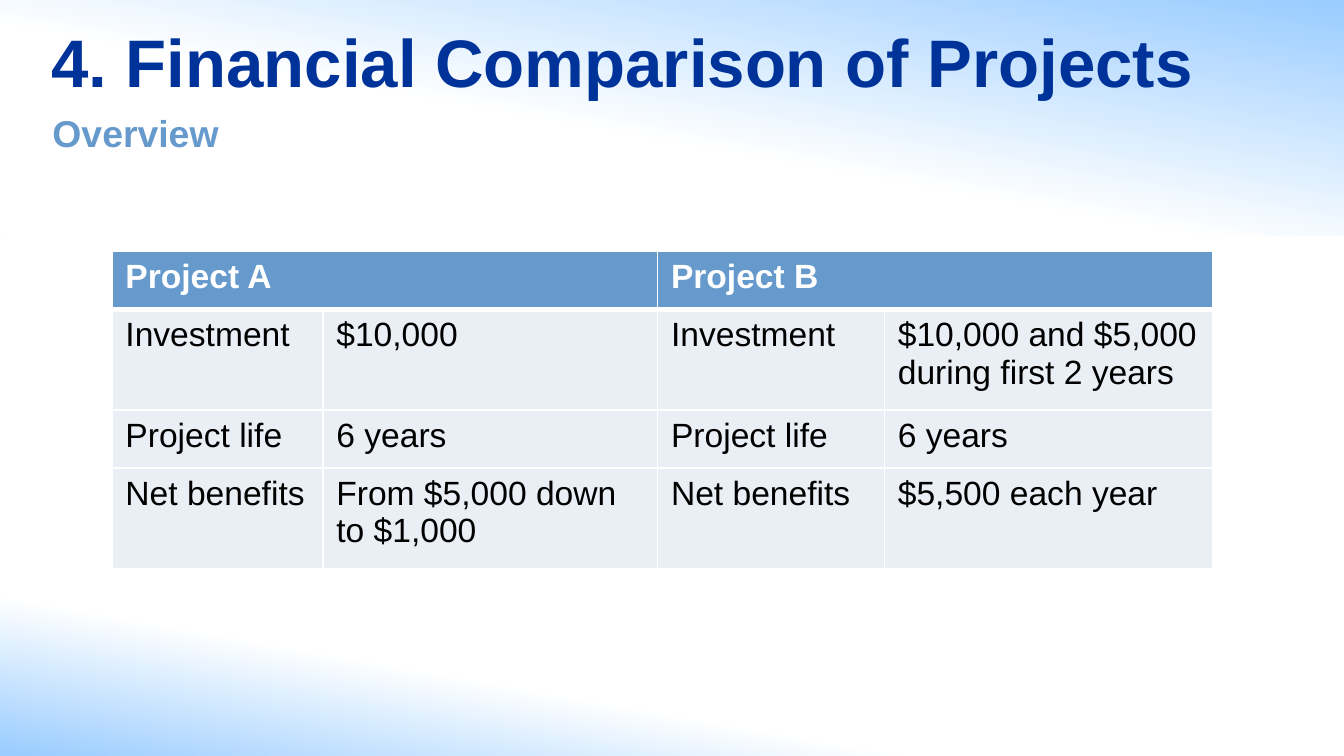
from lxml.etree import SubElement
from pptx import Presentation
from pptx.dml.color import RGBColor
from pptx.enum.shapes import MSO_SHAPE
from pptx.enum.text import MSO_ANCHOR, MSO_AUTO_SIZE, PP_ALIGN
from pptx.oxml import parse_xml
from pptx.oxml.ns import nsdecls, qn
from pptx.util import Pt

# Content
TITLE = "4. Financial Comparison of Projects"
SUBTITLE = "Overview"
PROJECTS = ["Project A", "Project B"]
ROWS = [
    ["Investment", "$10,000", "Investment", "$10,000 and $5,000 during first 2 years"],
    ["Project life", "6 years", "Project life", "6 years"],
    ["Net benefits", "From $5,000 down to $1,000", "Net benefits", "$5,500 each year"],
]

# Look and layout, in points
THEME = {
    "font": "Arial", "title_size": 36, "subtitle_size": 20, "table_size": 18,
    "navy": "003399", "blue": "6699CC", "sky": "99CCFF",
    "pale": "EAEFF6", "white": "FFFFFF", "black": "000000",
}
PAGE_SIZE = (720, 405)
# Left, top, width, height, clockwise angle, position of white in percent
WASHES = [(0, 313, 502, 92, 280, 48), (0, 0, 720, 126, 100, 56)]
TITLE_PLACE = (20.2, 7.2, 669, 51)
SUBTITLE_PLACE = (21, 55.4, 481, 31.5)
TABLE_ORIGIN = (60, 134.8)
COLUMN_WIDTHS = [113, 179.3, 121.5, 175.9]
ROW_HEIGHTS = [31, 54, 31, 54]


def color(name):
    return RGBColor.from_string(THEME[name])


def points(values):
    return [Pt(value) for value in values]


def write(frame, text, size, tone, bold):
    frame.text = text
    font = frame.paragraphs[0].runs[0].font
    font.name, font.size, font.bold = THEME["font"], Pt(THEME[size]), bold
    font.color.rgb = color(tone)


def add_wash(page, left, top, width, height, angle, white_at):
    wash = page.shapes.add_shape(MSO_SHAPE.RECTANGLE, *points((left, top, width, height)))
    wash.shadow.inherit = False
    wash.line.fill.background()
    wash.fill.gradient()
    wash.fill.gradient_angle = 360 - angle
    start, end = wash.fill.gradient_stops
    start.color.rgb, start.position = color("sky"), 0
    end.color.rgb, end.position = color("white"), white_at / 100


def style_cell(cell, fill, bottom_width):
    cell.fill.solid()
    cell.fill.fore_color.rgb = color(fill)
    properties = cell._tc.get_or_add_tcPr()
    edges = {"lnL": 1, "lnR": 1, "lnT": 1, "lnB": bottom_width}
    for position, (edge, width) in enumerate(edges.items()):
        line = parse_xml(f'<a:{edge} {nsdecls("a")} w="{Pt(width)}"/>')
        solid = SubElement(line, qn("a:solidFill"))
        SubElement(solid, qn("a:srgbClr"), val=THEME["white"])
        properties.insert(position, line)


def add_comparison(page):
    size = (sum(COLUMN_WIDTHS), sum(ROW_HEIGHTS))
    table = page.shapes.add_table(
        len(ROW_HEIGHTS), len(COLUMN_WIDTHS), *points(TABLE_ORIGIN + size)).table
    table.first_row = table.horz_banding = False
    for column, width in zip(table.columns, COLUMN_WIDTHS):
        column.width = Pt(width)
    for row, height in zip(table.rows, ROW_HEIGHTS):
        row.height = Pt(height)

    # Each project heading spans a label column and a value column
    for index, project in enumerate(PROJECTS):
        first, last = table.cell(0, 2 * index), table.cell(0, 2 * index + 1)
        first.merge(last)
        write(first.text_frame, project, "table_size", "white", True)
        for cell in (first, last):
            style_cell(cell, "blue", 3)

    for row_index, row in enumerate(ROWS, start=1):
        for column_index, text in enumerate(row):
            cell = table.cell(row_index, column_index)
            write(cell.text_frame, text, "table_size", "black", False)
            style_cell(cell, "pale", 1)
            if row_index == 1:
                cell._tc.tcPr.find(qn("a:lnT")).set("w", str(Pt(3)))


def main():
    deck = Presentation()
    deck.slide_width, deck.slide_height = points(PAGE_SIZE)
    page = deck.slides.add_slide(deck.slide_layouts[5])
    page.background.fill.solid()
    page.background.fill.fore_color.rgb = color("white")

    # Corner gradients
    for wash in WASHES:
        add_wash(page, *wash)

    # Title, brought in front of the gradients
    title = page.shapes.title
    title.element.getparent().append(title.element)
    title.left, title.top, title.width, title.height = points(TITLE_PLACE)
    write(title.text_frame, TITLE, "title_size", "navy", True)
    title.text_frame.vertical_anchor = MSO_ANCHOR.MIDDLE
    title.text_frame.auto_size = MSO_AUTO_SIZE.NONE
    title.text_frame.paragraphs[0].alignment = PP_ALIGN.LEFT

    # Subtitle
    box = page.shapes.add_textbox(*points(SUBTITLE_PLACE))
    write(box.text_frame, SUBTITLE, "subtitle_size", "blue", True)
    box.text_frame.word_wrap = True
    box.text_frame.auto_size = MSO_AUTO_SIZE.SHAPE_TO_FIT_TEXT

    # Table
    add_comparison(page)
    deck.save("out.pptx")


if __name__ == "__main__":
    main()
